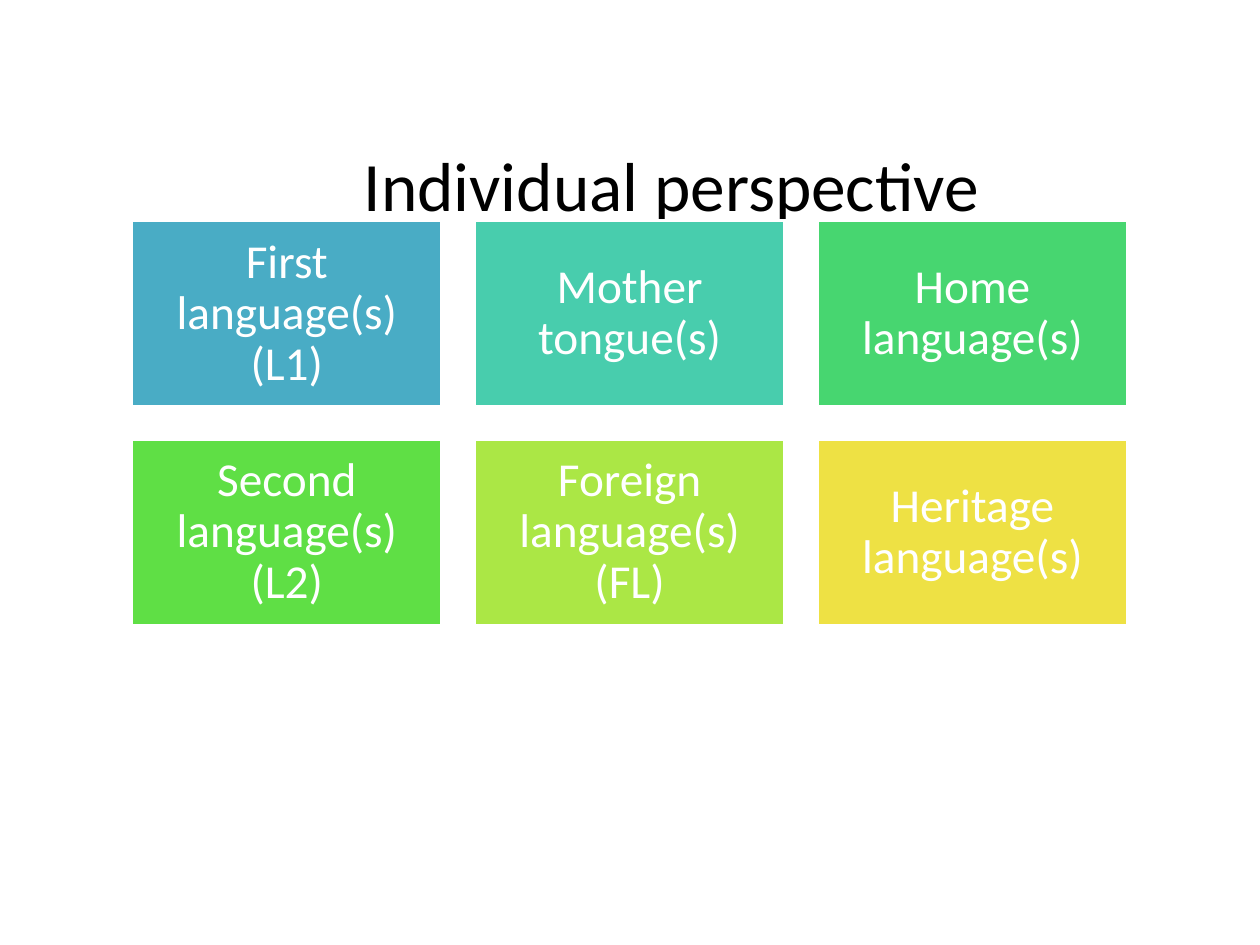
import pptx
import pptx.util
import pptx.dml.color
import pptx.enum.shapes
import pptx.enum.text

Pt = pptx.util.Pt
RGB = pptx.dml.color.RGBColor.from_string
ANCHOR = pptx.enum.text.MSO_ANCHOR
CENTER = pptx.enum.text.PP_ALIGN.CENTER

THEME = {
    "font": "Calibri",
    "title": {"size": 39.6, "color": "000000"},
    "tile": {"size": 27, "color": "FFFFFF"},
    "outline": "FFFFFF",
}


def write(sp, text, style, frame, spacing):
    """Fill a shape with one centred paragraph in a theme style."""
    tf = sp.text_frame
    for name, value in frame.items():
        setattr(tf, name, value)
    p = tf.paragraphs[0]
    p.alignment, p.line_spacing = CENTER, spacing
    r = p.add_run()
    r.text = text
    for name, value in {"name": THEME["font"], "size": Pt(style["size"])}.items():
        setattr(r.font, name, value)
    r.font.color.rgb = RGB(style["color"])


prs = pptx.Presentation()
prs.slide_width, prs.slide_height = Pt(720), Pt(540)
s = prs.slides.add_slide(prs.slide_layouts[5])

# Title, resting on the bottom of its box
title = s.shapes.title
box = {"left": Pt(59.76), "top": Pt(36), "width": Pt(648), "height": Pt(93)}
for name, value in box.items():
    setattr(title, name, value)
title_frame = {
    "word_wrap": True,
    "auto_size": pptx.enum.text.MSO_AUTO_SIZE.NONE,
    "vertical_anchor": ANCHOR.BOTTOM,
    "margin_top": 0,
    "margin_bottom": 0,
}
write(title, "Individual perspective", THEME["title"], title_frame, 1.0)

# Grid of language terms, three to a row
tiles = [
    ("First language(s) (L1)", "49ACC5"),
    ("Mother tongue(s)", "48CDAD"),
    ("Home language(s)", "47D670"),
    ("Second language(s) (L2)", "5FDF45"),
    ("Foreign language(s) (FL)", "ABE745"),
    ("Heritage language(s)", "EEE144"),
]
columns, left, top = 3, 75, 126
width, height, gap = 177.7, 106.6, 18.2
tile_frame = {"word_wrap": True, "vertical_anchor": ANCHOR.MIDDLE}
for side in ("left", "right", "top", "bottom"):
    tile_frame["margin_" + side] = Pt(8)

for i, (text, fill) in enumerate(tiles):
    row, col = divmod(i, columns)
    sp = s.shapes.add_shape(
        pptx.enum.shapes.MSO_SHAPE.RECTANGLE,
        Pt(left + col * (width + gap)), Pt(top + row * (height + gap)),
        Pt(width), Pt(height))
    sp.shadow.inherit = False
    sp.fill.solid()
    sp.fill.fore_color.rgb = RGB(fill)
    sp.line.color.rgb = RGB(THEME["outline"])
    sp.line.width = Pt(2)
    write(sp, text, THEME["tile"], tile_frame, 0.9)

prs.save("out.pptx")
